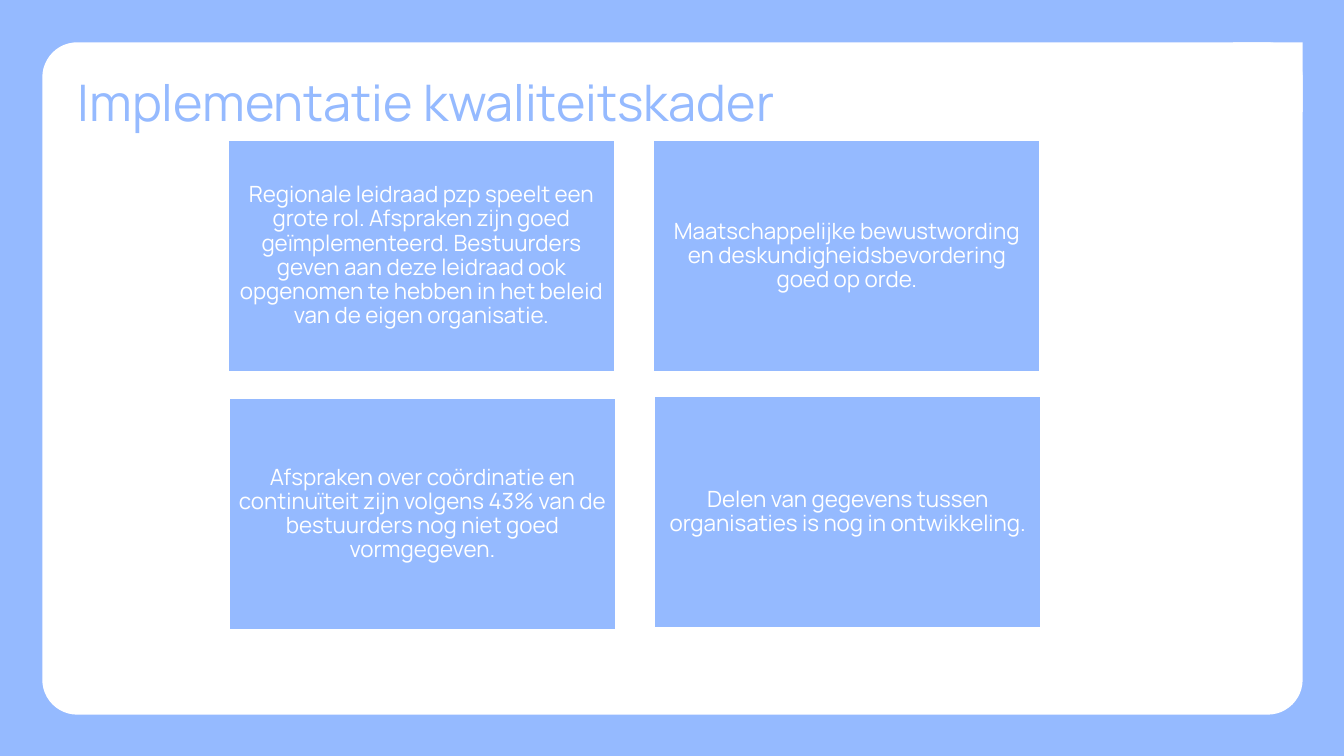
from pptx import Presentation
from pptx.dml.color import RGBColor
from pptx.enum.shapes import MSO_SHAPE
from pptx.enum.text import MSO_ANCHOR, MSO_AUTO_SIZE, PP_ALIGN
from pptx.util import Inches, Pt

BLUE = RGBColor(0x95, 0xBA, 0xFF)
WHITE = RGBColor(0xFF, 0xFF, 0xFF)
RECTANGLE = MSO_SHAPE.RECTANGLE
ROUNDED = MSO_SHAPE.ROUNDED_RECTANGLE
TOP, MIDDLE = MSO_ANCHOR.TOP, MSO_ANCHOR.MIDDLE
LEFT, CENTER = PP_ALIGN.LEFT, PP_ALIGN.CENTER
NO_AUTOFIT = MSO_AUTO_SIZE.NONE

CARD_WIDTH, CARD_HEIGHT = 3.84, 2.3
CARDS = [
    (2.26, 1.39, "Regionale leidraad pzp speelt een grote rol. Afspraken zijn goed "
     "geïmplementeerd. Bestuurders geven aan deze leidraad ook opgenomen te hebben "
     "in het beleid van de eigen organisatie."),
    (6.48, 1.39, "Maatschappelijke bewustwording en deskundigheidsbevordering goed op orde."),
    (6.49, 3.93, "Delen van gegevens tussen organisaties is nog in ontwikkeling."),
    (2.27, 3.95, "Afspraken over coördinatie en continuïteit zijn volgens 43% van de "
     "bestuurders nog niet goed vormgegeven."),
]


def write_text(shape, text, size, color, align=LEFT, anchor=TOP, inset=0, font="Manrope"):
    frame = shape.text_frame
    frame.word_wrap = True
    frame.auto_size = NO_AUTOFIT
    frame.vertical_anchor = anchor
    frame.margin_left = frame.margin_right = Inches(inset)
    frame.margin_top = frame.margin_bottom = Inches(inset)
    paragraph = frame.paragraphs[0]
    paragraph.alignment = align
    paragraph.line_spacing = 0.9
    paragraph.space_before = Pt(0)
    run = paragraph.add_run()
    run.text = text
    run.font.size = Pt(size)
    run.font.name = font
    run.font.bold = False
    run.font.color.rgb = color


class SlideBuilder:
    """Holds the slide and its style, and draws each kind of element."""

    def __init__(self, presentation):
        self.slide = presentation.slides.add_slide(presentation.slide_layouts[5])
        background = self.slide.background.fill
        background.solid()
        background.fore_color.rgb = BLUE

    def block(self, left, top, width, height, fill, kind=RECTANGLE):
        shape = self.slide.shapes.add_shape(
            kind, Inches(left), Inches(top), Inches(width), Inches(height))
        shape.shadow.inherit = False
        shape.fill.solid()
        shape.fill.fore_color.rgb = fill
        shape.line.fill.background()
        return shape

    def panel(self, left, top, width, height, corner):
        panel = self.block(left, top, width, height, WHITE, kind=ROUNDED)
        panel.adjustments[0] = 0.052
        self.block(left + width - corner, top, corner, corner, WHITE)

    def title(self, text, left, top, width, height):
        title = self.slide.shapes.title
        title.left, title.top = Inches(left), Inches(top)
        title.width, title.height = Inches(width), Inches(height)
        write_text(title, text, 36, BLUE)
        title.element.getparent().append(title.element)

    def card(self, left, top, text):
        card = self.block(left, top, CARD_WIDTH, CARD_HEIGHT, BLUE)
        card.line.color.rgb = WHITE
        card.line.width = Pt(1.5)
        write_text(card, text, 16, WHITE, align=CENTER, anchor=MIDDLE, inset=0.07)


def main():
    presentation = Presentation()
    presentation.slide_width = Inches(13.33)
    presentation.slide_height = Inches(7.5)
    builder = SlideBuilder(presentation)
    builder.panel(0.42, 0.42, 12.5, 6.67, corner=0.69)
    builder.title("Implementatie kwaliteitskader", 0.77, 0.77, 11.81, 0.49)
    for left, top, text in CARDS:
        builder.card(left, top, text)
    presentation.save("out.pptx")


if __name__ == "__main__":
    main()
